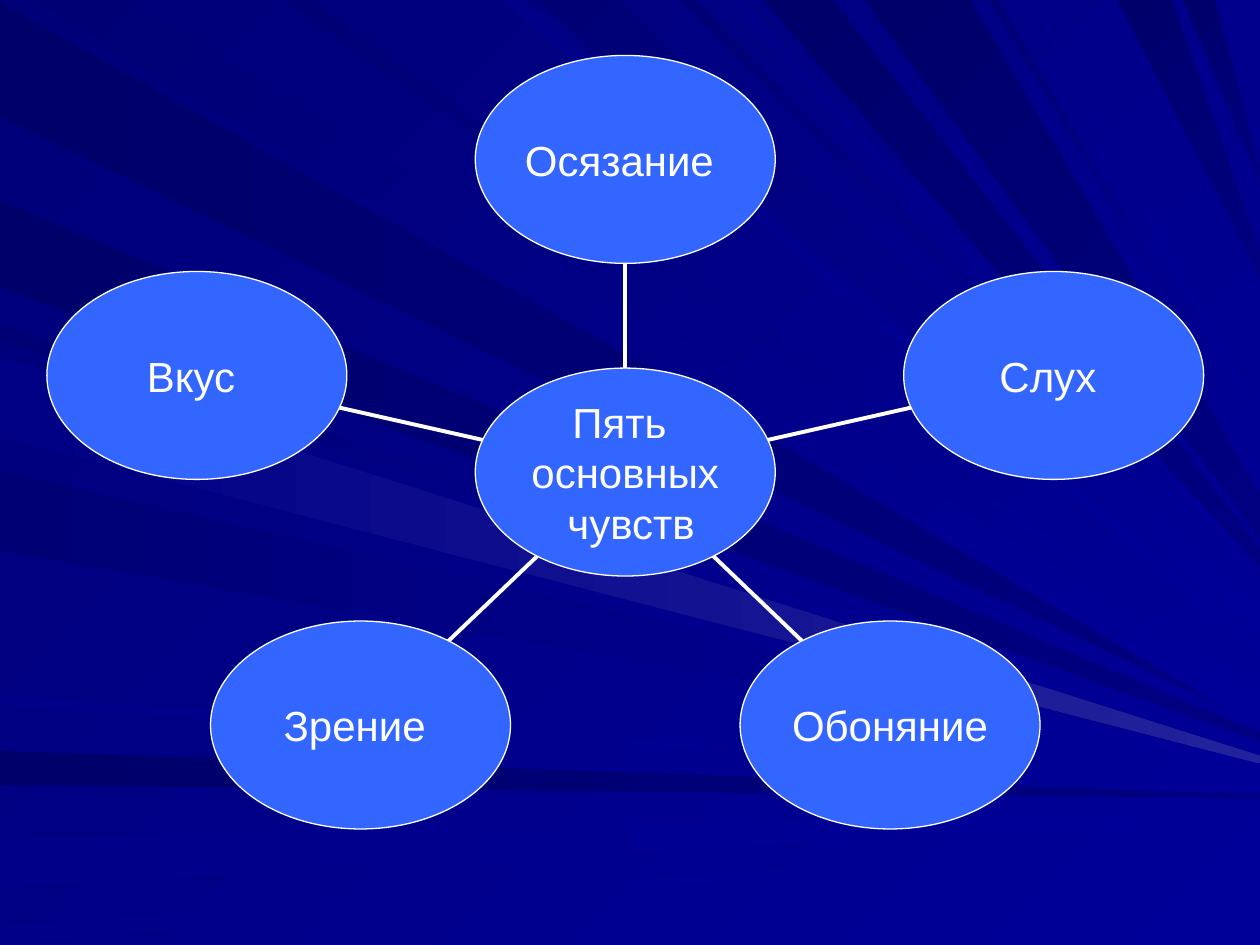
import math
from dataclasses import dataclass

import lxml.etree
import pptx
import pptx.dml.color
import pptx.enum.shapes
import pptx.enum.text
import pptx.oxml.ns
import pptx.util

Pt = pptx.util.Pt


@dataclass(frozen=True)
class Theme:
    """Hold the colours, type and line sizes of the slide."""
    font: str = "Arial"
    text_size: float = 24
    text: str = "FFFFFF"
    oval: str = "3366FF"
    line: str = "FFFFFF"
    outline_width: float = 0.75
    spoke_width: float = 2.25
    backdrop: tuple = ("000078", "000099")
    dark: tuple = ("00006B", "000080")
    middle: tuple = ("000075", "000099")
    light: tuple = ("000088", "000099")
    glow: tuple = ("000085", "22229C")


THEME = Theme()
SLIDE_BOX = (0, 0, 720, 540)
MAP_BOX = (26.8, 31.7, 661, 442)
OVAL_SIZE = (171.4, 118.8)
HUB = ("Пять ", "основных", " чувств")
SENSES = {"Вкус ": 4, "Зрение ": 3, "Обоняние": 2, "Слух ": 1, "Осязание ": 0}
DIAGONAL = 45
RAY_GRID = 1000
TAPER = {"left": 0.1, "top": 0.4}
RAYS = (
    ("left", 2, 93, 570, THEME.dark),
    ("top", 26, 101, 563, THEME.middle),
    ("left", 596, 623, 632, THEME.dark),
    ("left", 665, 704, 647, THEME.light),
    ("left", 735, 750, 662, THEME.light),
    ("left", 258, 270, 589, THEME.middle),
    ("left", 159, 228, 585, THEME.dark),
    ("top", 398, 416, 518, THEME.light),
    ("top", 426, 492, 493, THEME.middle),
    ("top", 540, 552, 463, THEME.middle),
    ("top", 606, 661, 446, THEME.dark),
    ("top", 887, 930, 210, THEME.dark),
    ("top", 939, 964, 140, THEME.dark),
    ("left", 374, 437, 606, THEME.middle),
    ("left", 552, 560, 622, THEME.light),
    ("top", 225, 247, 550, THEME.middle),
    ("top", 577, 588, 454, THEME.light),
    ("top", 686, 770, 410, THEME.dark),
    ("top", 785, 792, 357, THEME.middle),
    ("top", 815, 824, 336, THEME.light),
    ("left", 283, 347, 603, THEME.glow))


def apply_format(target, values):
    """Set each named attribute of the target."""
    for name, value in values.items():
        setattr(target, name, value)


def rgb(colour):
    """Return a hexadecimal colour as an RGB value."""
    return pptx.dml.color.RGBColor.from_string(colour)


def paint(fill, colour):
    """Fill with one colour."""
    fill.solid()
    fill.fore_color.rgb = rgb(colour)


def blend(fill, colours, angle):
    """Fill with a gradient turned clockwise by an angle."""
    fill.gradient()
    fill.gradient_angle = -angle % 360
    for stop, colour in zip(fill.gradient_stops, colours):
        stop.color.rgb = rgb(colour)


def draw_rays(slide, box):
    """Spread rays from the left and top edges of the box to its right edge."""
    left, top, width, _ = box
    for edge, start, end, tip, shade in RAYS:
        spread = TAPER[edge] * (end - start) / 2
        tips = [(RAY_GRID, tip - spread), (RAY_GRID, tip + spread)]
        if edge == "left":
            outline, angle = [(0, end), (0, start), *tips], 0
        else:
            outline, angle = [(start, 0), (end, 0), *tips], DIAGONAL
        builder = slide.shapes.build_freeform(*outline[0], scale=Pt(width / RAY_GRID))
        builder.add_line_segments(outline[1:], close=True)
        ray = builder.convert_to_shape(Pt(left), Pt(top))
        ray.shadow.inherit = False
        ray.line.fill.background()
        blend(ray.fill, shade, angle)


def draw_oval(slide, centre, lines):
    """Draw a captioned oval around its centre."""
    corner = [Pt(middle - size / 2) for middle, size in zip(centre, OVAL_SIZE)]
    oval = slide.shapes.add_shape(
        pptx.enum.shapes.MSO_SHAPE.OVAL, *corner, *map(Pt, OVAL_SIZE))
    oval.shadow.inherit = False
    paint(oval.fill, THEME.oval)
    paint(oval.line.fill, THEME.line)
    oval.line.width = Pt(THEME.outline_width)
    caption = oval.text_frame
    apply_format(caption, {
        "text": "\n".join(lines), "word_wrap": False,
        "vertical_anchor": pptx.enum.text.MSO_ANCHOR.MIDDLE,
        "margin_left": 0, "margin_right": 0, "margin_top": 0, "margin_bottom": 0})
    for paragraph in caption.paragraphs:
        paragraph.alignment = pptx.enum.text.PP_ALIGN.CENTER
        for run in paragraph.runs:
            apply_format(run.font, {"name": THEME.font, "size": Pt(THEME.text_size)})
            run.font.color.rgb = rgb(THEME.text)


def draw_spoke(slide, hub, dx, dy):
    """Join the edge of the hub to the edge of the oval at the given offset."""
    reach = 0.5 / math.hypot(dx / OVAL_SIZE[0], dy / OVAL_SIZE[1])
    ends = [Pt(middle + offset * share) for share in (reach, 1 - reach)
            for middle, offset in zip(hub, (dx, dy))]
    spoke = slide.shapes.add_connector(pptx.enum.shapes.MSO_CONNECTOR.STRAIGHT, *ends)
    paint(spoke.line.fill, THEME.line)
    spoke.line.width = Pt(THEME.spoke_width)
    lxml.etree.SubElement(spoke._element.spPr, pptx.oxml.ns.qn("a:effectLst"))


def draw_sense_map(slide, box):
    """Place the senses at equal angles around the hub inside the box."""
    left, top, width, height = box
    step = 2 * math.pi / len(SENSES)
    radius_x = (width - OVAL_SIZE[0]) / (2 * math.sin(step))
    radius_y = (height - OVAL_SIZE[1]) / (1 + math.cos(step / 2))
    hub = (left + width / 2, top + OVAL_SIZE[1] / 2 + radius_y)
    for sense, position in SENSES.items():
        dx = radius_x * math.sin(position * step)
        dy = -radius_y * math.cos(position * step)
        draw_spoke(slide, hub, dx, dy)
        draw_oval(slide, (hub[0] + dx, hub[1] + dy), [sense])
    draw_oval(slide, hub, HUB)


def main():
    """Build and save the slide."""
    deck = pptx.Presentation()
    apply_format(deck, {"slide_width": Pt(SLIDE_BOX[2]), "slide_height": Pt(SLIDE_BOX[3])})
    slide = deck.slides.add_slide(deck.slide_layouts.get_by_name("Blank"))
    blend(slide.background.fill, THEME.backdrop, DIAGONAL)
    draw_rays(slide, SLIDE_BOX)
    draw_sense_map(slide, MAP_BOX)
    deck.save("out.pptx")


if __name__ == "__main__":
    main()
